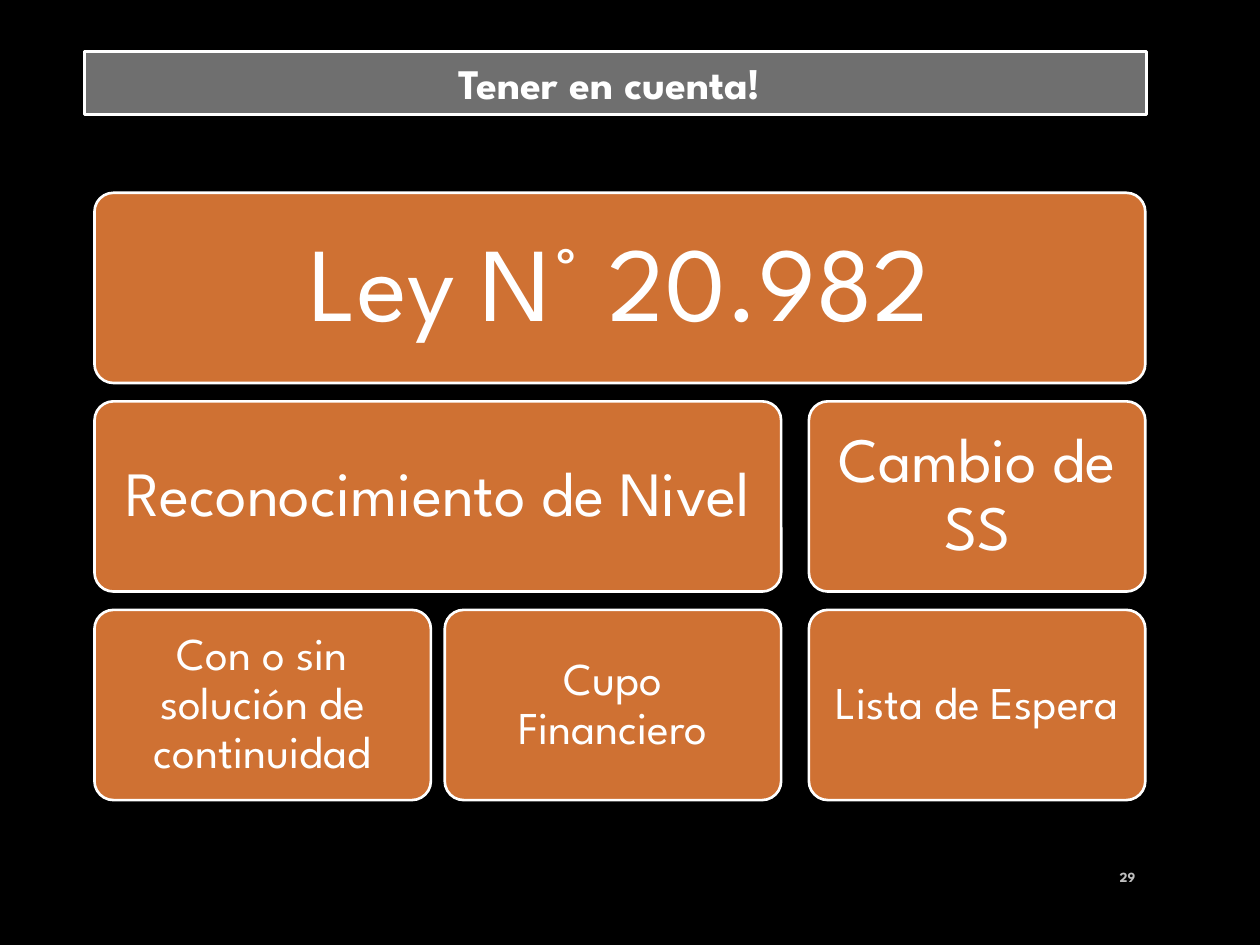
from pptx import Presentation
from pptx.dml.color import RGBColor
from pptx.enum.shapes import MSO_SHAPE as Shape
from pptx.enum.text import MSO_ANCHOR as Anchor, PP_ALIGN as Align
from pptx.util import Inches, Pt

BLACK = RGBColor(0x00, 0x00, 0x00)
WHITE = RGBColor(0xFF, 0xFF, 0xFF)
GREY = RGBColor(0x6F, 0x6F, 0x6F)
PALE = RGBColor(0xBF, 0xBF, 0xBF)
RUST = RGBColor(0xCF, 0x71, 0x33)
FONT = "League Spartan"


def write(shape, text, size, color=WHITE, bold=False, align=Align.CENTER,
          anchor=Anchor.MIDDLE, pad=None, gap=None):
    frame = shape.text_frame
    frame.word_wrap = True
    frame.vertical_anchor = anchor
    if pad is not None:
        frame.margin_left = frame.margin_right = Inches(pad)
        frame.margin_top = frame.margin_bottom = Inches(pad)
    para = frame.paragraphs[0]
    para.alignment = align
    para.line_spacing = gap
    run = para.add_run()
    run.text = text
    font = run.font
    font.name, font.size, font.bold = FONT, Pt(size), bold
    font.color.rgb = color


def add_box(kind, left, top, width, height, fill, line):
    box = slide.shapes.add_shape(kind, Inches(left), Inches(top),
                                 Inches(width), Inches(height))
    box.shadow.inherit = False
    box.fill.solid()
    box.fill.fore_color.rgb = fill
    box.line.color.rgb = WHITE
    box.line.width = Pt(line)
    return box


prs = Presentation()
prs.slide_width, prs.slide_height = Inches(10), Inches(7.5)
slide = prs.slides.add_slide(prs.slide_layouts[6])
slide.background.fill.solid()
slide.background.fill.fore_color.rgb = BLACK

# Slide number
num = slide.shapes.add_textbox(Inches(8.66), Inches(6.76),
                               Inches(0.45), Inches(0.4))
write(num, "29", 8, color=PALE, bold=True, align=Align.RIGHT)

# Title bar
bar = add_box(Shape.RECTANGLE, 0.67, 0.41, 8.43, 0.5, GREY, 2)
write(bar, "Tener en cuenta! ", 24, bold=True, anchor=Anchor.TOP)

# Rows of the hierarchy: size, padding, then left, width and text of each box
COLS = [0.75, 3.53, 6.42]
WIDE = 2.67
TOP, HIGH, STEP = 1.53, 1.51, 1.655
ROWS = [
    (60, 0.25, [(0, 2, "Ley N° 20.982")]),
    (36, 0.15, [(0, 1, "Reconocimiento de Nivel"), (2, 2, "Cambio de SS")]),
    (26, 0.11, [(0, 0, "Con o sin solución de continuidad"),
                (1, 1, "Cupo Financiero"), (2, 2, "Lista de Espera")]),
]
for row, (size, pad, cells) in enumerate(ROWS):
    for first, last, text in cells:
        width = COLS[last] + WIDE - COLS[first]
        box = add_box(Shape.ROUNDED_RECTANGLE, COLS[first], TOP + row * STEP,
                      width, HIGH, RUST, 1.5)
        box.adjustments[0] = 0.1
        write(box, text, size, pad=pad, gap=0.9)

prs.save("out.pptx")
